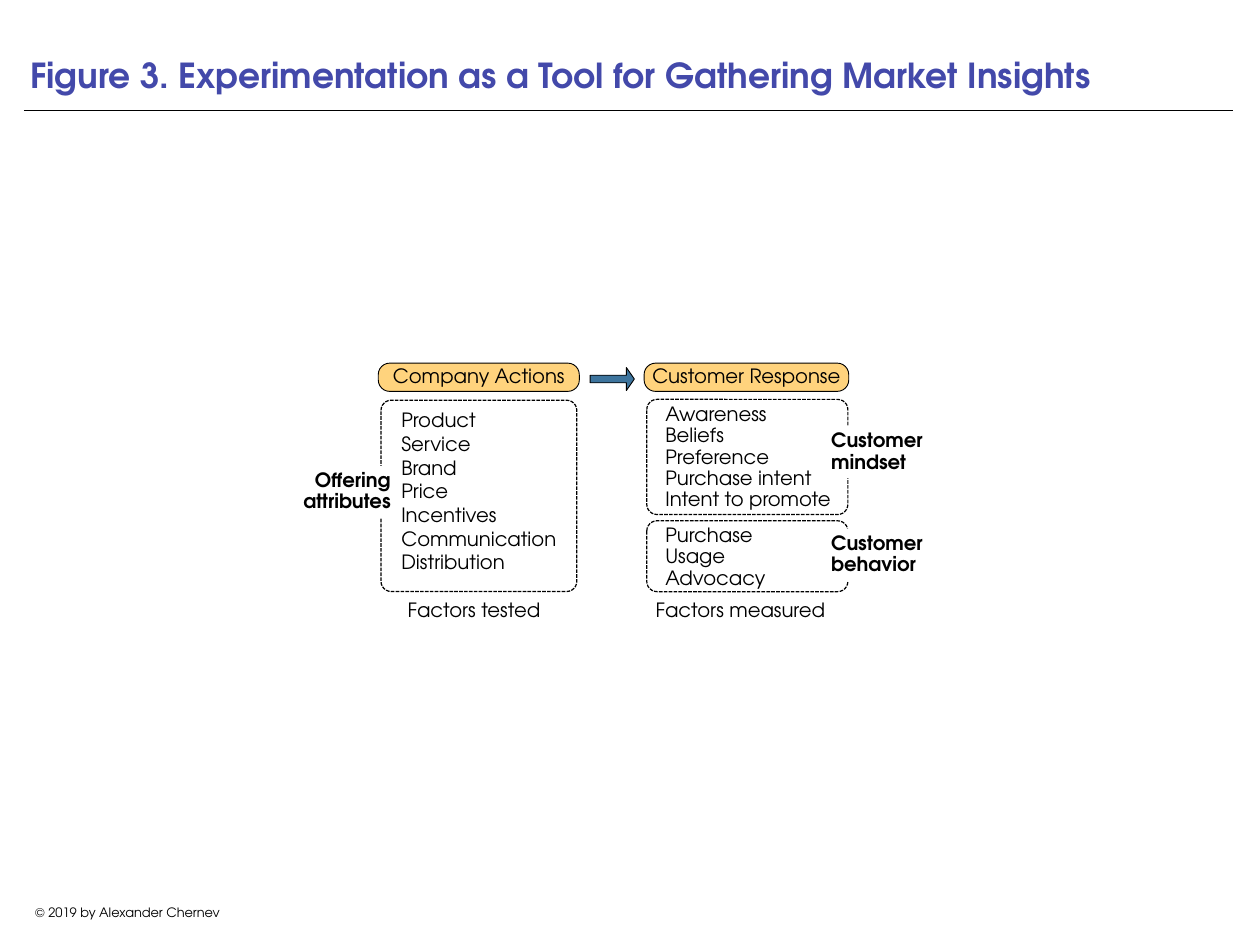
"""Build the slide on experimentation as a tool for gathering market insights."""
import pptx
import pptx.dml.color
import pptx.enum.dml
import pptx.enum.shapes
import pptx.enum.text
import pptx.oxml
import pptx.util

Pt = pptx.util.Pt
Shapes = pptx.enum.shapes.MSO_SHAPE
Align = pptx.enum.text.PP_ALIGN
Anchor = pptx.enum.text.MSO_ANCHOR

FONT = "TeX Gyre Adventor"
COLOURS = {
    "text": "000000",
    "title": "4349AA",
    "pill": "FFD37D",
    "arrow": "3D749D",
    "paper": "FFFFFF",
}


def colour(name):
    """Return the named colour."""
    return pptx.dml.color.RGBColor.from_string(COLOURS[name])


def write(box, lines, size=16, bold=False, ink="text", align=Align.LEFT,
          anchor=Anchor.TOP, inset=0, spacing=0.9, before=0, wrap=True):
    """Write one paragraph per line into a box."""
    frame = box.text_frame
    frame.word_wrap = wrap
    frame.vertical_anchor = anchor
    frame.margin_left = frame.margin_right = Pt(inset)
    frame.margin_top = frame.margin_bottom = Pt(inset)
    for index, line in enumerate(lines):
        para = frame.add_paragraph() if index else frame.paragraphs[0]
        para.alignment = align
        para.line_spacing = spacing
        para.space_before = Pt(before)
        span = para.add_run()
        span.text = line
        span.font.name = FONT
        span.font.size = Pt(size)
        span.font.bold = bold
        span.font.color.rgb = colour(ink)


def add_text(page, place, lines, **style):
    """Add a text box."""
    box = page.shapes.add_textbox(*map(Pt, place))
    write(box, lines, **style)


def add_block(page, kind, place, fill=None, line=None, adjust=()):
    """Add a preset shape with a plain fill and outline."""
    block = page.shapes.add_shape(kind, *map(Pt, place))
    block.shadow.inherit = False
    for index, value in enumerate(adjust):
        block.adjustments[index] = value
    if fill:
        block.fill.solid()
        block.fill.fore_color.rgb = colour(fill)
    else:
        block.fill.background()
    if line:
        block.line.color.rgb = colour("text")
        block.line.width = Pt(line)
    else:
        block.line.fill.background()
    return block


def add_heading(page, left, width, text):
    """Add a rounded column heading."""
    pill = add_block(page, Shapes.ROUNDED_RECTANGLE, (left, 295.2, width, 23),
                     "pill", 0.75, [0.406])
    write(pill, [text], align=Align.CENTER)


def add_group(page, place, label_place, label, align=Align.LEFT):
    """Add a dashed frame with a label that interrupts its side."""
    radius = 8.3
    frame = add_block(page, Shapes.ROUNDED_RECTANGLE, place, line=1,
                      adjust=[radius / min(place[2:])])
    frame.line.dash_style = pptx.enum.dml.MSO_LINE.SQUARE_DOT
    tag = add_block(page, Shapes.RECTANGLE, (*label_place, 90, 42.5), "paper")
    write(tag, [label], bold=True, align=align, anchor=Anchor.MIDDLE)


def add_rule(page, left, right, top):
    """Add the thin line under the title."""
    rule = page.shapes.add_connector(pptx.enum.shapes.MSO_CONNECTOR.STRAIGHT,
                                     Pt(left), Pt(top), Pt(right), Pt(top))
    rule.line.color.rgb = colour("text")
    rule.line.width = Pt(0.5)
    properties = rule.element.spPr
    properties.append(pptx.oxml.parse_xml(
        '<a:effectLst xmlns:a="http://schemas.openxmlformats.org/drawingml/2006/main"/>'))


def main():
    """Build and save the deck."""
    deck = pptx.Presentation()
    deck.slide_width, deck.slide_height = Pt(1023.84), Pt(768.24)
    page = deck.slides.add_slide(deck.slide_layouts[6])

    add_text(page, (19.5, 731.5, 168.5, 20), ["© 2019 by Alexander Chernev"],
             size=10.5, align=Align.CENTER, inset=3.6, spacing=1, wrap=False)
    add_rule(page, 19.5, 1002.2, 89.3)
    add_text(page, (19.5, 0, 982, 82.8),
             ["Figure 3. Experimentation as a Tool for Gathering Market Insights"],
             size=28, bold=True, ink="title", anchor=Anchor.BOTTOM, inset=5, spacing=1)

    add_text(page, (535.7, 324, 153.4, 98),
             ["Awareness", "Beliefs", "Preference", "Purchase intent",
              "Intent to promote"], inset=5)
    add_text(page, (535.7, 422.3, 153.4, 62), ["Purchase", "Usage", "Advocacy"], inset=5)
    add_text(page, (321.1, 324, 143.3, 152.6),
             ["Product", "Service", "Brand", "Price", "Incentives",
              "Communication", "Distribution"],
             anchor=Anchor.MIDDLE, inset=5, before=2)

    add_heading(page, 307.4, 163.4, "Company Actions")
    add_heading(page, 523.4, 166.3, "Customer Response")
    add_group(page, (525.6, 324.7, 163.4, 93.6), (675.4, 346.3), "Customer mindset")
    add_group(page, (525.6, 423.4, 163.4, 57.6), (675.4, 429.8), "Customer behavior")
    add_group(page, (309.6, 325.4, 159.1, 155.5), (227.5, 378.7),
              "Offering attributes", Align.RIGHT)
    add_block(page, Shapes.RIGHT_ARROW, (479.5, 298.8, 36, 18.7),
              "arrow", 0.75, [0.329, 0.347])

    for left, top, width, caption in ((324, 483.1, 122.4, "Factors tested"),
                                      (527.8, 483.8, 147.6, "Factors measured")):
        add_text(page, (left, top, width, 28), [caption], align=Align.CENTER,
                 anchor=Anchor.MIDDLE, inset=4.3, spacing=0.8, wrap=False)

    deck.save("out.pptx")


if __name__ == "__main__":
    main()
